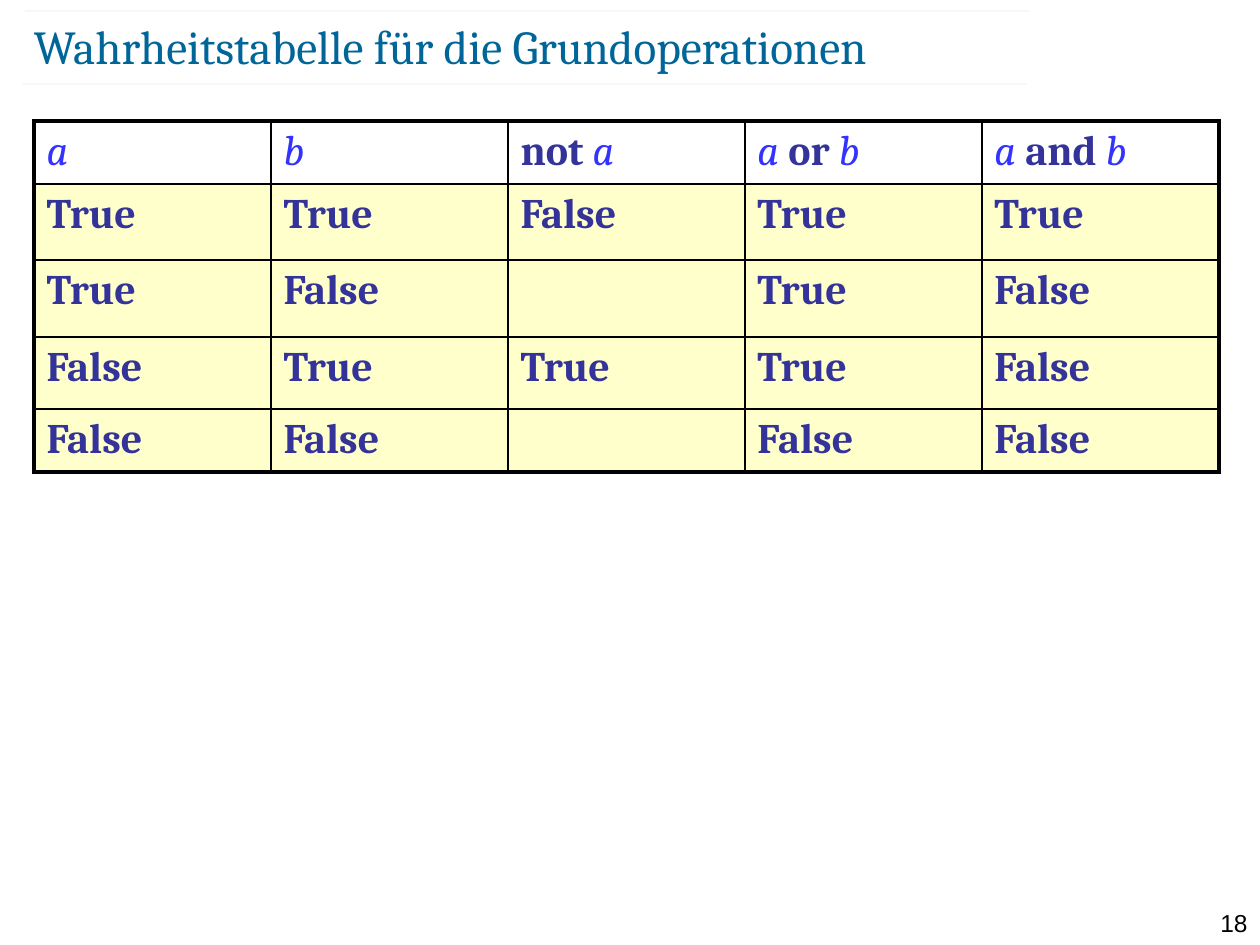
from lxml.etree import SubElement
from pptx import Presentation
from pptx.dml.color import RGBColor
from pptx.enum.shapes import MSO_CONNECTOR
from pptx.enum.text import MSO_ANCHOR, MSO_AUTO_SIZE, PP_ALIGN
from pptx.oxml.ns import qn
from pptx.util import Emu, Pt

SLIDE_WIDTH, SLIDE_HEIGHT = 1260, 945
EMU_PER_PX = 914400 / 126

BLACK = RGBColor(0x00, 0x00, 0x00)
TEAL = RGBColor(0x00, 0x66, 0x99)
VARIABLE_BLUE = RGBColor(0x33, 0x33, 0xFF)
KEYWORD_BLUE = RGBColor(0x33, 0x33, 0x99)
CREAM = RGBColor(0xFF, 0xFF, 0xCC)

VARIABLES = ("a", "b")
HEADINGS = ["a", "b", "not a", "a or b", "a and b"]
TRUTH_ROWS = [
    ["True", "True", "False", "True", "True"],
    ["True", "False", "", "True", "False"],
    ["False", "True", "True", "True", "False"],
    ["False", "False", "", "False", "False"],
]
ROW_HEIGHTS = [61, 76, 77, 72, 61]
COLUMN_WIDTH = 237


def px(length):
    return Emu(round(length * EMU_PER_PX))


class SlideBuilder:
    serif = "Cambria"
    sans = "Arial"
    outer_border = Pt(2.25)
    inner_border = Pt(1)

    def __init__(self, slide):
        self.slide = slide

    def style(self, run, size, color, font, bold=False, italic=False):
        run.font.size = Pt(size)
        run.font.name = font
        run.font.color.rgb = color
        run.font.bold = bold
        run.font.italic = italic

    def title(self, text, left, top, width, height):
        heading = self.slide.shapes.title
        heading.left, heading.top = px(left), px(top)
        heading.width, heading.height = px(width), px(height)
        frame = heading.text_frame
        frame.text = text
        frame.auto_size = MSO_AUTO_SIZE.NONE
        frame.vertical_anchor = MSO_ANCHOR.MIDDLE
        frame.margin_left = frame.margin_right = 0
        frame.margin_top = frame.margin_bottom = 0
        frame.paragraphs[0].alignment = PP_ALIGN.LEFT
        self.style(frame.paragraphs[0].runs[0], 27, TEAL, self.serif)

    def page_number(self, text, left, top, width, height):
        box = self.slide.shapes.add_textbox(px(left), px(top), px(width), px(height))
        frame = box.text_frame
        frame.word_wrap = True
        frame.text = text
        frame.paragraphs[0].alignment = PP_ALIGN.RIGHT
        self.style(frame.paragraphs[0].runs[0], 14, BLACK, self.sans)

    def rule(self, left, top, width):
        rule = self.slide.shapes.add_connector(
            MSO_CONNECTOR.STRAIGHT, px(left), px(top), px(left + width), px(top))
        rule.line.color.rgb = TEAL
        rule.line.width = Pt(0.1)
        properties = rule._element.spPr
        color = properties.find(".//" + qn("a:srgbClr"))
        SubElement(color, qn("a:alpha"), val="35000")
        SubElement(properties, qn("a:effectLst"))

    def border(self, cell, side, width):
        line = SubElement(cell._tc.get_or_add_tcPr(), qn(f"a:ln{side}"), w=str(width))
        fill = SubElement(line, qn("a:solidFill"))
        SubElement(fill, qn("a:srgbClr"), val=str(BLACK))

    def cell_text(self, cell, text):
        words = text.split()
        paragraph = cell.text_frame.paragraphs[0]
        for position, word in enumerate(words, 1):
            run = paragraph.add_run()
            run.text = word if position == len(words) else word + " "
            is_variable = word in VARIABLES
            color = VARIABLE_BLUE if is_variable else KEYWORD_BLUE
            self.style(run, 24, color, self.serif, not is_variable, is_variable)

    def truth_table(self, rows, left, top):
        row_count, column_count = len(rows), len(rows[0])
        table = self.slide.shapes.add_table(
            row_count, column_count, px(left), px(top),
            px(COLUMN_WIDTH * column_count), px(sum(ROW_HEIGHTS))).table
        table.first_row = table.horz_banding = False
        for column in table.columns:
            column.width = px(COLUMN_WIDTH)
        for r, values in enumerate(rows):
            table.rows[r].height = px(ROW_HEIGHTS[r])
            for c, value in enumerate(values):
                cell = table.cell(r, c)
                self.cell_text(cell, value)
                edges = {"L": c == 0, "R": c == column_count - 1,
                         "T": r == 0, "B": r == row_count - 1}
                for side, is_outer in edges.items():
                    self.border(cell, side, self.outer_border if is_outer else self.inner_border)
                if r == 0:
                    cell.fill.background()
                else:
                    cell.fill.solid()
                    cell.fill.fore_color.rgb = CREAM


def main():
    presentation = Presentation()
    presentation.slide_width = px(SLIDE_WIDTH)
    presentation.slide_height = px(SLIDE_HEIGHT)
    builder = SlideBuilder(presentation.slides.add_slide(presentation.slide_layouts[5]))
    builder.page_number("18", 1191, 902, 69, 30)
    builder.rule(23, 84, 1004)
    builder.rule(25, 11, 1004)
    builder.title("Wahrheitstabelle für die Grundoperationen", 34, 16, 1095, 60)
    builder.truth_table([HEADINGS] + TRUTH_ROWS, 34, 121)
    presentation.save("out.pptx")


if __name__ == "__main__":
    main()
